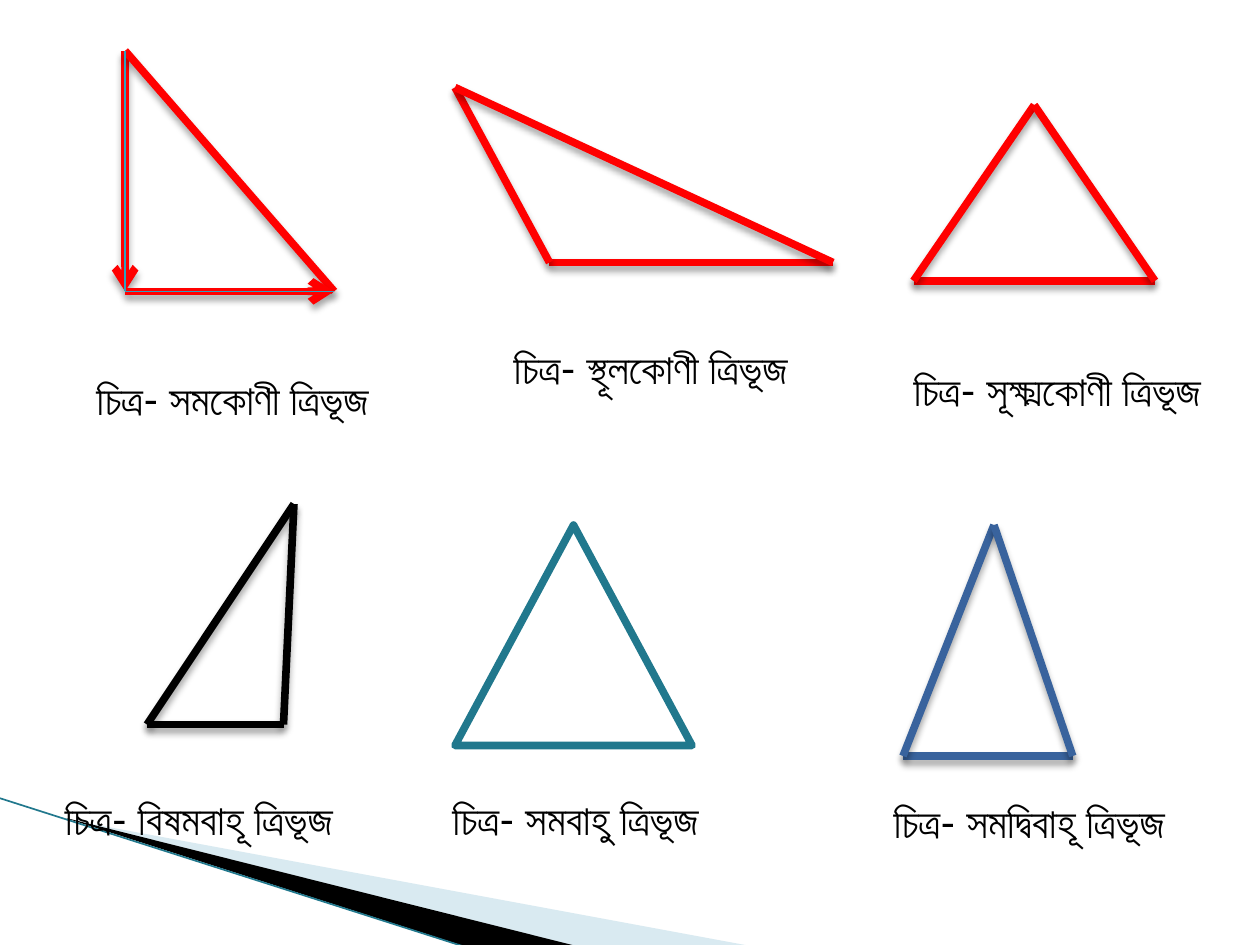
from dataclasses import dataclass
from typing import NamedTuple

from lxml.etree import SubElement
from pptx import Presentation
from pptx.dml.color import RGBColor as RGB
from pptx.enum.shapes import MSO_CONNECTOR as CONN, MSO_SHAPE as SHAPE
from pptx.oxml.ns import qn
from pptx.util import Pt


@dataclass(frozen=True)
class Theme:
    red: str = "FF0000"
    black: str = "000000"
    teal: str = "21788D"
    blue: str = "39639D"
    aqua: str = "2DA2BF"
    pale: str = "A0CBDC"
    font: str = "Lato"
    label_size: float = 24
    side_width: float = 4.33
    thin_width: float = 0.75


class Point(NamedTuple):
    x: float
    y: float


class Side(NamedTuple):
    start: Point
    end: Point
    color: str
    width: float = Theme.side_width
    arrow: bool = False
    shadow: bool = True


class Triangle(NamedTuple):
    apex: Point
    left: Point
    right: Point
    color: str


class Label(NamedTuple):
    text: str
    x: float
    y: float
    width: float


class Wedge(NamedTuple):
    points: tuple[Point, ...]
    color: str
    alpha: int = 100


T = Theme()

WEDGES = (
    Wedge((Point(39.5, 468.5), Point(428.5, 540.5), Point(328.5, 540.5), Point(39.5, 468)), T.pale, 40),
    Wedge((Point(38, 467.5), Point(329, 540.5), Point(268, 541.5), Point(39, 468)), T.black),
)
EDGE = Side(Point(-0.5, 456), Point(267, 541.5), T.teal, 0.95, shadow=False)

TRIANGLES = (
    Triangle(Point(260, 50), Point(314, 150), Point(476, 150), T.red),
    Triangle(Point(591, 60), Point(522, 160.5), Point(660, 160.5), T.red),
    Triangle(Point(168, 288), Point(84, 414), Point(162, 414), T.black),
    Triangle(Point(568, 300), Point(516, 432), Point(613, 432), T.blue),
)

TOP, CORNER, TIP = Point(71.5, 29), Point(71.5, 166.5), Point(191, 166.5)
RIGHT_TRIANGLE = (
    Side(TOP, CORNER, T.red, arrow=True),
    Side(TOP, TIP, T.red),
    Side(CORNER, TIP, T.red, arrow=True),
    Side(TOP, CORNER, T.aqua, T.thin_width, shadow=False),
    Side(CORNER, TIP, T.aqua, T.thin_width, shadow=False),
)

LABELS = (
    Label("চিত্র- সমকোণী ত্রিভূজ", 48, 210, 174),
    Label("চিত্র- স্থূলকোণী ত্রিভূজ", 286.5, 192, 205),
    Label("চিত্র- সূক্ষ্মকোণী ত্রিভূজ", 515, 204.5, 187),
    Label("চিত্র- বিষমবাহূ ত্রিভূজ", 30, 450, 176.5),
    Label("চিত্র- সমবাহু ত্রিভূজ", 251.5, 450, 174),
    Label("চিত্র- সমদ্বিবাহূ ত্রিভূজ", 503.5, 451.5, 198.5),
)


def add_alpha(color_xml, percent: int) -> None:
    SubElement(color_xml, qn("a:alpha"), val=str(percent * 1000))


def draw_side(shapes, side: Side) -> None:
    s = shapes.add_connector(CONN.STRAIGHT, *map(Pt, (*side.start, *side.end)))
    s.line.color.rgb = RGB.from_string(side.color)
    s.line.width = Pt(side.width)
    if side.arrow:
        SubElement(s.line._get_or_add_ln(), qn("a:tailEnd"), type="arrow")
    effects = SubElement(s._element.spPr, qn("a:effectLst"))
    if side.shadow:
        shadow = SubElement(effects, qn("a:outerShdw"), blurRad=str(Pt(4)), dist=str(Pt(3)),
                            dir="5400000", rotWithShape="0")
        add_alpha(SubElement(shadow, qn("a:srgbClr"), val=T.black), 35)


def draw_group(shapes, sides: tuple[Side, ...]) -> None:
    group = shapes.add_group_shape()
    for side in sides:
        draw_side(group.shapes, side)


def draw_triangle(shapes, tri: Triangle) -> None:
    ends = ((tri.left, tri.right), (tri.apex, tri.left), (tri.apex, tri.right))
    draw_group(shapes, tuple(Side(a, b, tri.color) for a, b in ends))


def draw_equilateral(shapes, x: float, y: float, width: float, height: float) -> None:
    s = shapes.add_shape(SHAPE.ISOSCELES_TRIANGLE, Pt(x), Pt(y), Pt(width), Pt(height))
    s.shadow.inherit = False
    s.fill.background()
    s.line.color.rgb = RGB.from_string(T.teal)
    s.line.width = Pt(T.side_width)


def draw_wedge(shapes, wedge: Wedge) -> None:
    first, *rest = [(Pt(p.x), Pt(p.y)) for p in wedge.points]
    builder = shapes.build_freeform(*first, scale=1.0)
    builder.add_line_segments(rest, close=True)
    s = builder.convert_to_shape()
    s.shadow.inherit = False
    s.fill.solid()
    s.fill.fore_color.rgb = RGB.from_string(wedge.color)
    s.line.fill.background()
    if wedge.alpha < 100:
        add_alpha(s._element.spPr.find(".//" + qn("a:srgbClr")), wedge.alpha)


def add_text(shapes, text: str, *, x: float, y: float, width: float, height: float = 36,
             size: float = T.label_size, color: str = T.black, font: str = T.font) -> None:
    tf = shapes.add_textbox(Pt(x), Pt(y), Pt(width), Pt(height)).text_frame
    tf.word_wrap = True
    r = tf.paragraphs[0].add_run()
    r.text = text
    r.font.size = Pt(size)
    r.font.name = font
    r.font.color.rgb = RGB.from_string(color)


def main() -> None:
    prs = Presentation()
    prs.slide_width, prs.slide_height = Pt(720), Pt(540)
    shapes = prs.slides.add_slide(prs.slide_layouts[6]).shapes
    for wedge in WEDGES:
        draw_wedge(shapes, wedge)
    draw_side(shapes, EDGE)
    for tri in TRIANGLES:
        draw_triangle(shapes, tri)
    draw_equilateral(shapes, 260, 300, 135.5, 126)
    draw_group(shapes, RIGHT_TRIANGLE)
    for label in LABELS:
        add_text(shapes, label.text, x=label.x, y=label.y, width=label.width)
    prs.save("out.pptx")


if __name__ == "__main__":
    main()
